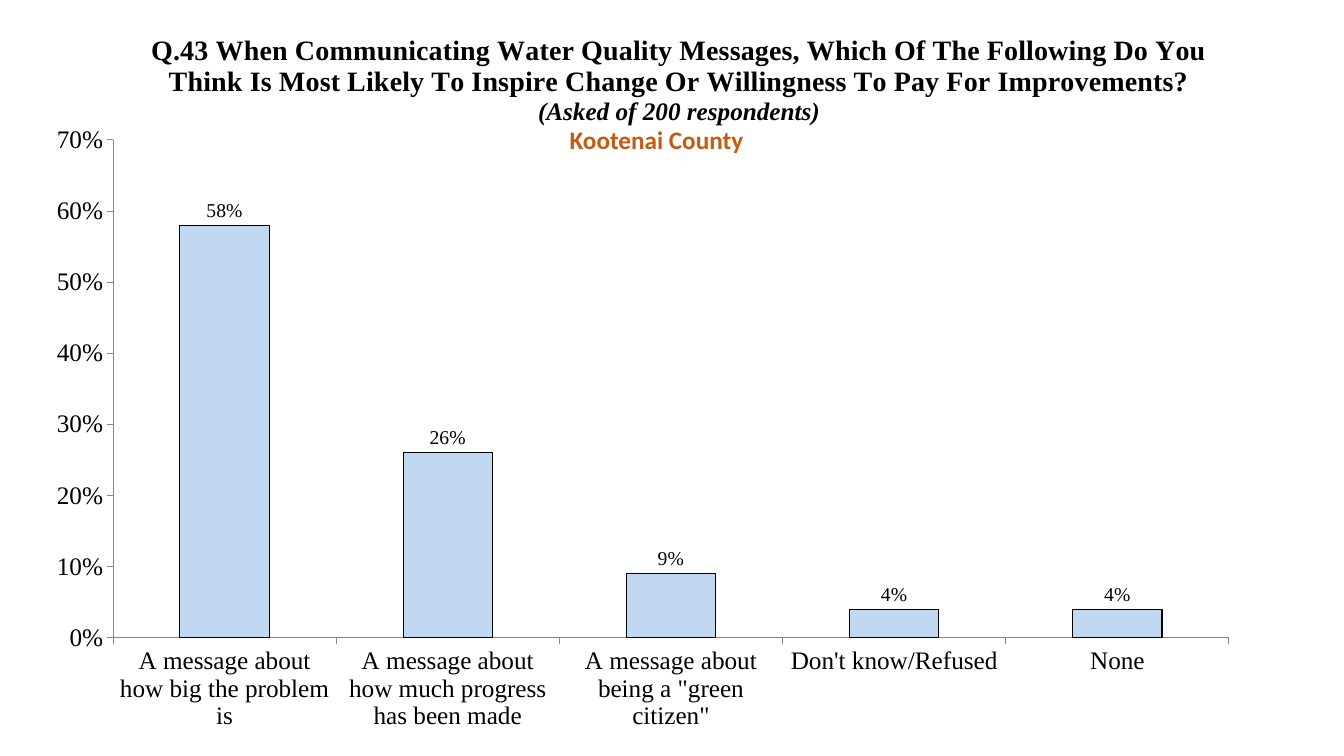
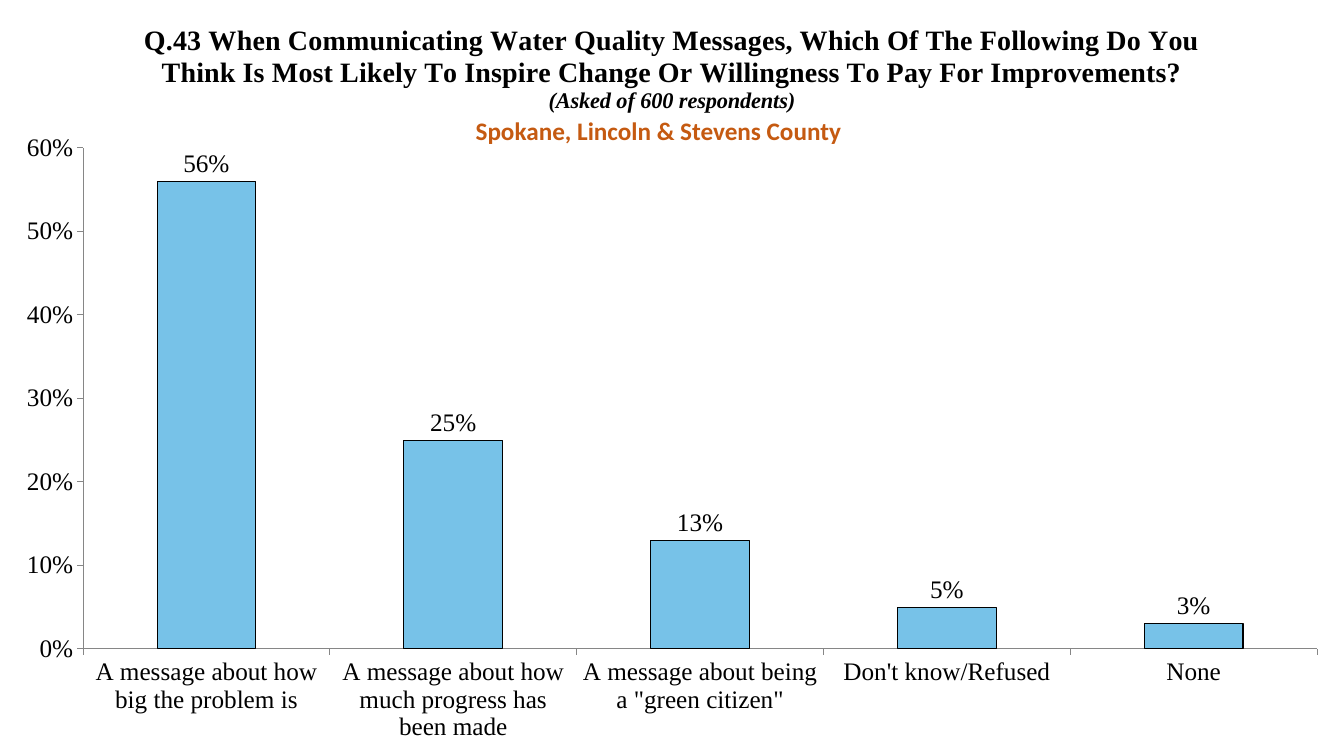
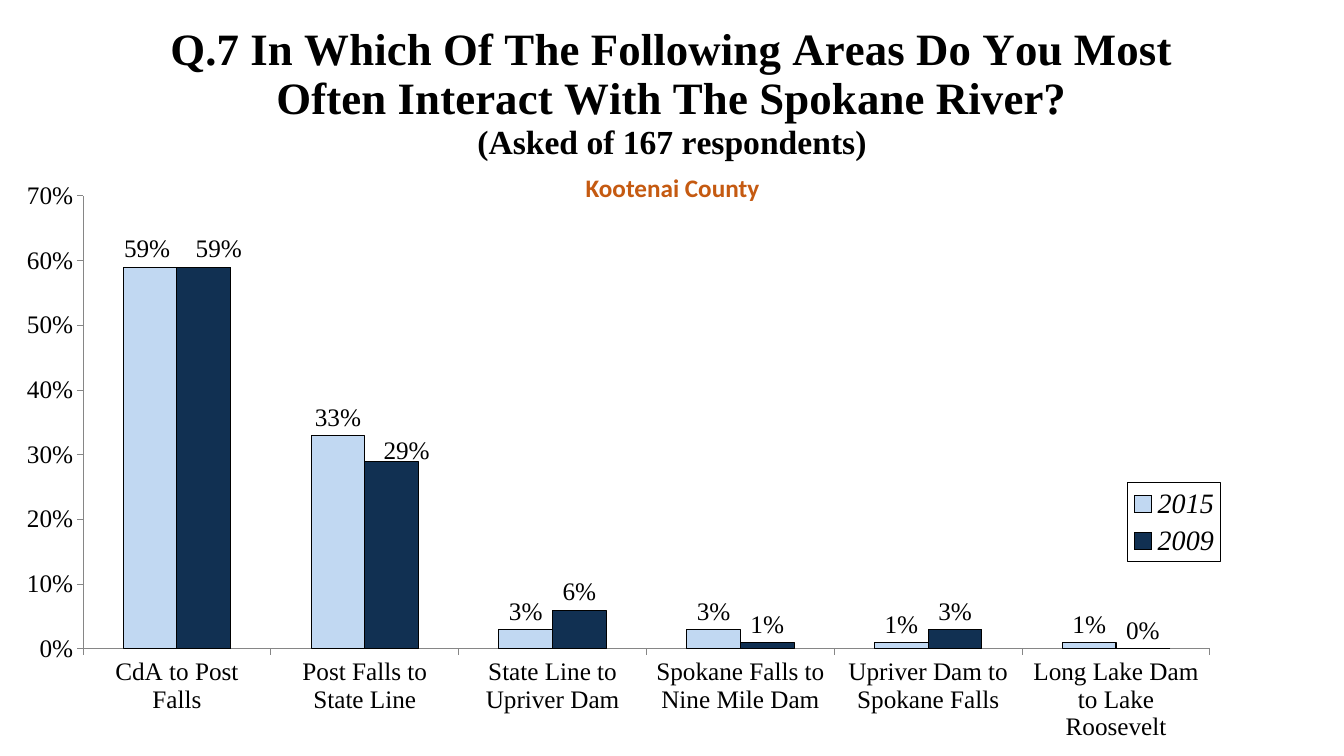
import pptx
import pptx.chart.data
import pptx.dml.color
import pptx.enum.chart
import pptx.enum.text
import pptx.oxml
import pptx.oxml.ns
import pptx.util

WIDTH, HEIGHT = 1344, 756
EMU_PER_PX = 12192000 / WIDTH
COLORS = {
    "text": "000000",
    "county": "C55A11",
    "axis": "868686",
    "pale": "C1D8F2",
    "sky": "77C2E8",
    "navy": "113052",
}
SERIF, SANS = "Times New Roman", "Calibri"
TITLE_ONLY = 5

MESSAGE_QUESTION = (
    "Q.43 When Communicating Water Quality Messages, Which Of The Following "
    "Do You Think Is Most Likely To Inspire Change Or Willingness To Pay For "
    "Improvements?"
)
MESSAGES = [
    "A message about how big the problem is",
    "A message about how much progress has been made",
    'A message about being a "green citizen"',
    "Don't know/Refused",
    "None",
]
RIVER_AREAS = [
    "CdA to Post Falls",
    "Post Falls to State Line",
    "State Line to Upriver Dam",
    "Spokane Falls to Nine Mile Dam",
    "Upriver Dam to Spokane Falls",
    "Long Lake Dam to Lake Roosevelt",
]


def px(length):
    return pptx.util.Emu(round(length * EMU_PER_PX))


def rgb(name):
    return pptx.dml.color.RGBColor.from_string(COLORS[name])


def set_all(target, values):
    for name, value in values.items():
        setattr(target, name, value)


def set_font(font, size, name=SERIF, color="text", **values):
    set_all(font, {"size": pptx.util.Pt(size), "name": name, **values})
    font.color.rgb = rgb(color)


def set_line(line, color, width=0.75):
    line.color.rgb = rgb(color)
    line.width = pptx.util.Pt(width)


def set_layout(part, index, values, edge=True, inner=False):
    """Give a chart part a manual layout in px: x, y and, if given, width, height."""
    for old in part.xpath("c:layout"):
        part.remove(old)
    tags = '<c:layoutTarget val="inner"/>' if inner else ""
    if edge:
        tags += '<c:xMode val="edge"/><c:yMode val="edge"/>'
    for tag, value, whole in zip("xywh", values, (WIDTH, HEIGHT) * 2):
        tags += f'<c:{tag} val="{value / whole:.4f}"/>'
    part.insert(index, pptx.oxml.parse_xml(
        f'<c:layout {pptx.oxml.ns.nsdecls("c")}>'
        f"<c:manualLayout>{tags}</c:manualLayout></c:layout>"))


class SurveyDeck:
    """Holds the presentation, its style and the current slide."""

    def __init__(self):
        self.presentation = pptx.Presentation()
        set_all(self.presentation,
                {"slide_width": px(WIDTH), "slide_height": px(HEIGHT)})
        self.slide = None

    def add_slide(self):
        layout = self.presentation.slide_layouts[TITLE_ONLY]
        self.slide = self.presentation.slides.add_slide(layout)

    def county(self, name, left, top):
        heading = self.slide.shapes.title
        set_all(heading, {"left": px(left), "top": px(top),
                          "width": px(417), "height": px(41)})
        frame = heading.text_frame
        set_all(frame, {
            "word_wrap": True,
            "vertical_anchor": pptx.enum.text.MSO_ANCHOR.TOP,
            "auto_size": pptx.enum.text.MSO_AUTO_SIZE.SHAPE_TO_FIT_TEXT,
        })
        paragraph = frame.paragraphs[0]
        paragraph.alignment = pptx.enum.text.PP_ALIGN.CENTER
        run = paragraph.add_run()
        run.text = name
        set_font(run.font, 18, SANS, "county", bold=True)
        self.slide.shapes.element.append(heading.element)  # in front of the chart

    def column_chart(self, categories, series, plot_box, top_value, label_size=18):
        """Add a full-slide chart; series maps each name to (colour, values)."""
        data = pptx.chart.data.CategoryChartData(number_format="0%")
        data.categories = categories
        for name, (color, values) in series.items():
            data.add_series(name, values)
        chart = self.slide.shapes.add_chart(
            pptx.enum.chart.XL_CHART_TYPE.COLUMN_CLUSTERED,
            0, 0, px(WIDTH), px(HEIGHT), data).chart
        set_font(chart.font, 10, SANS)
        chart.has_legend = False
        plot = chart.plots[0]
        set_all(plot, {"gap_width": 150, "overlap": 0,
                       "vary_by_categories": False})
        for columns, (color, values) in zip(plot.series, series.values()):
            columns.format.fill.solid()
            columns.format.fill.fore_color.rgb = rgb(color)
            set_line(columns.format.line, "text")
            labels = columns.data_labels
            set_all(labels, {
                "show_value": True,
                "number_format": "0%",
                "number_format_is_linked": False,
                "position": pptx.enum.chart.XL_LABEL_POSITION.OUTSIDE_END,
            })
            set_font(labels.font, label_size)
        for axis in (chart.category_axis, chart.value_axis):
            set_all(axis, {
                "has_major_gridlines": False,
                "major_tick_mark": pptx.enum.chart.XL_TICK_MARK.OUTSIDE,
            })
            set_line(axis.format.line, "axis")
            set_font(axis.tick_labels.font, 18)
        set_all(chart.value_axis, {"minimum_scale": 0, "major_unit": 0.1,
                                   "maximum_scale": top_value})
        set_all(chart.value_axis.tick_labels,
                {"number_format": "0%", "number_format_is_linked": False})
        set_layout(chart.element.xpath(".//c:plotArea")[0], 0, plot_box, inner=True)
        return chart

    def question(self, chart, text, size, base, base_size, italic=True, corner=None):
        """Title the chart with the question and, below it, who was asked."""
        frame = chart.chart_title.text_frame
        lines = ((text, size, False), (base, base_size, italic))
        for number, (line, points, slanted) in enumerate(lines):
            paragraph = frame.add_paragraph() if number else frame.paragraphs[0]
            run = paragraph.add_run()
            run.text = line
            set_font(run.font, points, bold=True, italic=slanted)
        if corner:
            set_layout(chart.element.xpath("c:chart/c:title")[0], 1, corner)

    def legend(self, chart, box):
        chart.has_legend = True
        set_all(chart.legend, {
            "position": pptx.enum.chart.XL_LEGEND_POSITION.RIGHT,
            "include_in_layout": False,
        })
        set_font(chart.legend.font, 20, italic=True)
        part = chart.element.xpath(".//c:legend")[0]
        set_layout(part, 1, box)
        part.xpath("c:overlay")[0].addnext(pptx.oxml.parse_xml(
            f'<c:spPr {pptx.oxml.ns.nsdecls("c", "a")}><a:ln w="9525"><a:solidFill>'
            f'<a:srgbClr val="{COLORS["text"]}"/></a:solidFill></a:ln></c:spPr>'))

    def shift_label(self, chart, series, point, offset):
        """Move one value label from its usual place by (x, y) px."""
        label = chart.plots[0].series[series].points[point].data_label
        set_font(label.font, 18)
        label.position = pptx.enum.chart.XL_LABEL_POSITION.OUTSIDE_END
        part = chart.element.xpath(".//c:ser")[series].xpath(
            f"c:dLbls/c:dLbl[c:idx/@val={point}]")[0]
        set_layout(part, 1, offset, edge=False)


def main():
    deck = SurveyDeck()
    message_slides = [
        dict(county=("Kootenai County", 448, 119), color="pale",
             values=[0.58, 0.26, 0.09, 0.04, 0.04],
             plot=(113, 140, 1116, 498), top=0.7, label_size=14,
             base="(Asked of 200 respondents)", base_size=18, corner=(148, 30)),
        dict(county=("Spokane, Lincoln & Stevens County", 450, 110), color="sky",
             values=[0.56, 0.25, 0.13, 0.05, 0.03],
             plot=(83, 148, 1234, 501), top=0.6, label_size=18,
             base="(Asked of 600 respondents)", base_size=16, corner=None),
    ]
    for page in message_slides:
        deck.add_slide()
        chart = deck.column_chart(
            MESSAGES, {"Series 1": (page["color"], page["values"])},
            page["plot"], page["top"], page["label_size"])
        deck.question(chart, MESSAGE_QUESTION, 20, page["base"],
                      page["base_size"], corner=page["corner"])
        deck.county(*page["county"])

    deck.add_slide()
    chart = deck.column_chart(RIVER_AREAS, {
        "2015": ("pale", [0.59, 0.33, 0.03, 0.03, 0.01, 0.01]),
        "2009": ("navy", [0.59, 0.29, 0.06, 0.01, 0.03, 0]),
    }, (83, 196, 1127, 453), 0.7)
    deck.question(
        chart,
        "Q.7 In Which Of The Following Areas Do You Most Often Interact With "
        "The Spokane River?", 32, "(Asked of 167 respondents)", 24, italic=False)
    deck.legend(chart, (1128, 483, 93, 79))
    for series, point, offset in ((0, 0, (-3, 0)), (1, 0, (15, 0)), (1, 1, (15, 7))):
        deck.shift_label(chart, series, point, offset)
    deck.county("Kootenai County", 464, 167)

    deck.presentation.save("out.pptx")


if __name__ == "__main__":
    main()
